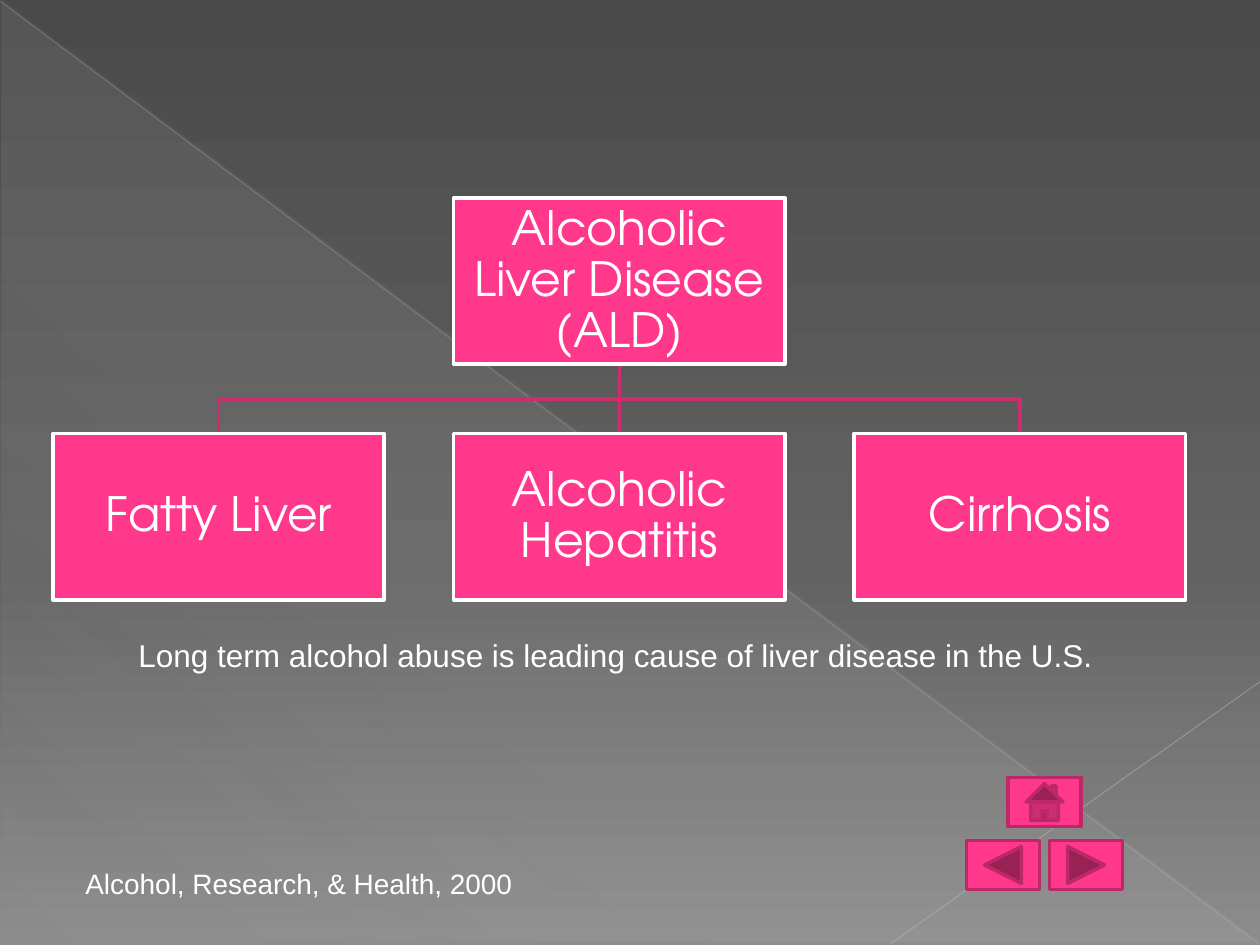
from typing import NamedTuple

from lxml.etree import SubElement
from pptx import Presentation
from pptx.dml.color import RGBColor
from pptx.enum.shapes import MSO_CONNECTOR, MSO_SHAPE
from pptx.enum.text import MSO_ANCHOR, MSO_AUTO_SIZE, PP_ALIGN
from pptx.oxml.ns import qn
from pptx.util import Inches, Pt

WHITE = RGBColor(0xFF, 0xFF, 0xFF)
PINK = RGBColor(0xFF, 0x38, 0x8C)
BUTTON_EDGE = RGBColor(0xBD, 0x29, 0x68)
BRANCH = RGBColor(0xCC, 0x2D, 0x70)
PALE = RGBColor(0xD2, 0xD2, 0xD2)
DIAGONAL = RGBColor(0xBF, 0xBF, 0xBF)
CORNER = RGBColor(0xC6, 0xC6, 0xC6)
BACKDROP = [(0, RGBColor(0x4A, 0x4A, 0x4A), 100),
            (60, RGBColor(0x62, 0x62, 0x62), 100),
            (100, RGBColor(0x8C, 0x8C, 0x8C), 100)]

# Chart grid in inches: origin, pitch of columns and rows, node size
LEFT, TOP, COL, ROW = 0.42, 1.57, 3.18, 1.87
NODE_W, NODE_H = 2.63, 1.32


class Node(NamedTuple):
    text: str
    col: int
    row: int

    @property
    def left(self) -> float:
        return LEFT + self.col * COL

    @property
    def top(self) -> float:
        return TOP + self.row * ROW

    @property
    def center(self) -> float:
        return self.left + NODE_W / 2


class Button(NamedTuple):
    kind: MSO_SHAPE
    col: float
    row: int


class Note(NamedTuple):
    text: str
    left: float
    top: float
    width: float
    height: float
    size: int


ROOT = Node("Alcoholic Liver Disease (ALD)", 1, 0)
LEAVES = [Node("Cirrhosis", 2, 1), Node("Alcoholic Hepatitis", 1, 1),
          Node("Fatty Liver", 0, 1)]
BUTTONS = [Button(MSO_SHAPE.ACTION_BUTTON_FORWARD_OR_NEXT, 1, 1),
           Button(MSO_SHAPE.ACTION_BUTTON_BACK_OR_PREVIOUS, 0, 1),
           Button(MSO_SHAPE.ACTION_BUTTON_HOME, 0.5, 0)]
NOTES = [
    Note("Long term alcohol abuse is leading cause of liver disease in the U.S.",
         1, 5, 7.85, 0.4, 18),
    Note("Alcohol, Research, & Health, 2000", 0.58, 6.83, 3.63, 0.37, 16),
]


def set_alpha(color_el, percent: float) -> None:
    SubElement(color_el, qn("a:alpha")).set("val", str(int(percent * 1000)))


def set_gradient(fill, element, stops: list, angle: int) -> None:
    """Give a fill its stops (position, colour, opacity) and clockwise angle."""
    fill.gradient()
    grad = element.find(".//" + qn("a:gradFill"))
    gs_list = grad.find(qn("a:gsLst"))
    for old in list(gs_list):
        gs_list.remove(old)
    for pos, color, opacity in stops:
        gs = SubElement(gs_list, qn("a:gs"))
        gs.set("pos", str(pos * 1000))
        clr = SubElement(gs, qn("a:srgbClr"))
        clr.set("val", str(color))
        if opacity < 100:
            set_alpha(clr, opacity)
    grad.find(qn("a:lin")).set("ang", str(angle * 60000))


def add_line(s, start: tuple, end: tuple, color: RGBColor, width: float,
             opacity: float = 100) -> None:
    ln = s.shapes.add_connector(MSO_CONNECTOR.STRAIGHT,
                                *map(Inches, (*start, *end)))
    ln.line.color.rgb = color
    ln.line.width = Pt(width)
    if opacity < 100:
        set_alpha(ln._element.spPr.find(".//" + qn("a:srgbClr")), opacity)
    SubElement(ln._element.spPr, qn("a:effectLst"))


def add_box(s, kind: MSO_SHAPE, left: float, top: float, width: float,
            height: float, edge: RGBColor):
    sp = s.shapes.add_shape(kind, *map(Inches, (left, top, width, height)))
    sp.shadow.inherit = False
    sp.fill.solid()
    sp.fill.fore_color.rgb = PINK
    sp.line.color.rgb = edge
    sp.line.width = Pt(2)
    return sp


def add_text(tf, text: str, font: str, size: int):
    p = tf.paragraphs[0]
    r = p.add_run()
    r.text = text
    for name, value in {"name": font, "size": Pt(size)}.items():
        setattr(r.font, name, value)
    r.font.color.rgb = WHITE
    return p


def add_branch(s, parent: Node, child: Node) -> None:
    start = (parent.center, parent.top + NODE_H)
    end = (child.center, child.top)
    if parent.col == child.col:
        add_line(s, start, end, BRANCH, 2)
        return
    mid = (start[1] + end[1]) / 2
    fb = s.shapes.build_freeform(*map(Inches, start))
    bends = [(start[0], mid), (end[0], mid), end]
    fb.add_line_segments([(Inches(x), Inches(y)) for x, y in bends], close=False)
    sp = fb.convert_to_shape()
    sp.shadow.inherit = False
    sp.fill.background()
    sp.line.color.rgb = BRANCH
    sp.line.width = Pt(2)


def add_node(s, node: Node) -> None:
    sp = add_box(s, MSO_SHAPE.RECTANGLE, node.left, node.top, NODE_W, NODE_H, WHITE)
    tf = sp.text_frame
    sides = ("left", "right", "top", "bottom")
    fmt = {f"margin_{side}": Inches(0.02) for side in sides}
    fmt |= {"word_wrap": True, "vertical_anchor": MSO_ANCHOR.MIDDLE}
    for name, value in fmt.items():
        setattr(tf, name, value)
    p = add_text(tf, node.text, "TeX Gyre Adventor", 27)
    p.alignment = PP_ALIGN.CENTER
    p.line_spacing = 0.9


def add_note(s, note: Note) -> None:
    tb = s.shapes.add_textbox(*map(Inches, note[1:5]))
    tf = tb.text_frame
    tf.word_wrap = False
    tf.auto_size = MSO_AUTO_SIZE.SHAPE_TO_FIT_TEXT
    add_text(tf, note.text, "Arial", note.size)


def main() -> None:
    prs = Presentation()
    prs.slide_width, prs.slide_height = Inches(10), Inches(7.5)
    s = prs.slides.add_slide(prs.slide_layouts[6])

    # Backdrop: gradient, pale triangle and two thin diagonals
    set_gradient(s.background.fill, s._element, BACKDROP, 90)
    sp = s.shapes.add_shape(MSO_SHAPE.RIGHT_TRIANGLE, Inches(0.01), 0,
                            Inches(9.99), Inches(7.48))
    sp.shadow.inherit = False
    sp.line.fill.background()
    set_gradient(sp.fill, sp._element,
                 [(0, PALE, 10), (70, PALE, 8), (100, PALE, 1)], 133)
    add_line(s, (0, 0.01), (9.99, 7.49), DIAGONAL, 0.39, 35)
    add_line(s, (10, 5.41), (7.07, 7.49), CORNER, 0.47, 45)

    # Navigation buttons
    for b in BUTTONS:
        add_box(s, b.kind, 7.67 + b.col * 0.66, 6.17 + b.row * 0.5,
                0.58, 0.39, BUTTON_EDGE)

    # Organisation chart
    for leaf in LEAVES:
        add_branch(s, ROOT, leaf)
    for node in (ROOT, *reversed(LEAVES)):
        add_node(s, node)

    # Statement and citation
    for note in NOTES:
        add_note(s, note)

    prs.save("out.pptx")


if __name__ == "__main__":
    main()
